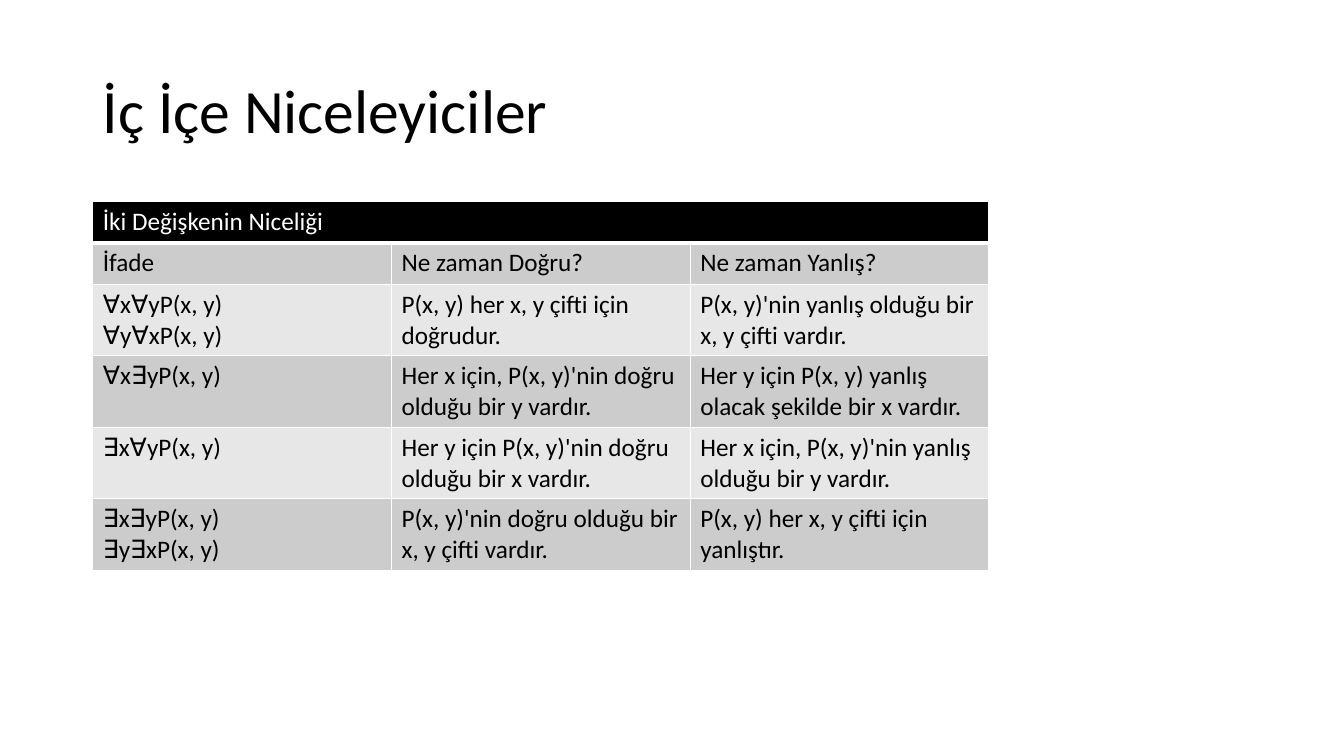
from lxml import etree
from pptx import Presentation
from pptx import util as u
from pptx.dml.color import RGBColor
from pptx.enum import text
from pptx.oxml import ns

COLORS = {"ink": "000000", "paper": "FFFFFF", "dark_band": "CCCCCC", "light_band": "E7E7E7"}
TITLE_FORMAT = {"name": "Calibri", "size": u.Pt(44), "bold": False}
CELL_FORMAT = {"name": "Calibri", "size": u.Pt(18), "bold": False}
LINE_HEIGHT = 0.3
CELL_PADDING = 0.11

TABLE_TITLE = "İki Değişkenin Niceliği"
QUANTIFIER_ROWS = [
    ("İfade", "Ne zaman Doğru?", "Ne zaman Yanlış?"),
    ("∀x∀yP(x, y)\n∀y∀xP(x, y)", "P(x, y) her x, y çifti için doğrudur.",
     "P(x, y)'nin yanlış olduğu bir x, y çifti vardır."),
    ("∀x∃yP(x, y)", "Her x için, P(x, y)'nin doğru olduğu bir y vardır.",
     "Her y için P(x, y) yanlış olacak şekilde bir x vardır."),
    ("∃x∀yP(x, y)", "Her y için P(x, y)'nin doğru olduğu bir x vardır.",
     "Her x için, P(x, y)'nin yanlış olduğu bir y vardır."),
    ("∃x∃yP(x, y)\n∃y∃xP(x, y)", "P(x, y)'nin doğru olduğu bir x, y çifti vardır.",
     "P(x, y) her x, y çifti için yanlıştır."),
]


def rgb(name):
    return RGBColor.from_string(COLORS[name])


def write(frame, content, color, font_format):
    frame.text = content
    for paragraph in frame.paragraphs:
        for run in paragraph.runs:
            for attribute, value in font_format.items():
                setattr(run.font, attribute, value)
            run.font.color.rgb = rgb(color)


def set_borders(cell, widths):
    """Draw white cell borders; widths maps each side to points."""
    properties = cell._tc.get_or_add_tcPr()
    for position, side in enumerate("LRTB"):
        line = etree.Element(ns.qn(f"a:ln{side}"), w=str(u.Pt(widths[side])))
        fill = etree.SubElement(line, ns.qn("a:solidFill"))
        etree.SubElement(fill, ns.qn("a:srgbClr"), val=COLORS["paper"])
        properties.insert(position, line)


def style_cell(cell, content, fill, color, bottom_width=1):
    write(cell.text_frame, content, color, CELL_FORMAT)
    cell.fill.solid()
    cell.fill.fore_color.rgb = rgb(fill)
    set_borders(cell, {"L": 1, "R": 1, "T": 1, "B": bottom_width})


def add_title(slide, content, left, top, width, height):
    box = slide.shapes.add_textbox(*map(u.Inches, (left, top, width, height)))
    frame = box.text_frame
    frame.word_wrap = True
    frame.vertical_anchor = text.MSO_ANCHOR.MIDDLE
    write(frame, content, "ink", TITLE_FORMAT)
    frame.paragraphs[0].line_spacing = 0.9


def add_quantifier_table(slide, left, top, width):
    line_counts = [1, 1] + [2] * (len(QUANTIFIER_ROWS) - 1)
    heights = [CELL_PADDING + LINE_HEIGHT * count for count in line_counts]
    column_count = len(QUANTIFIER_ROWS[0])
    table = slide.shapes.add_table(
        len(heights), column_count,
        *map(u.Inches, (left, top, width, sum(heights)))).table
    for row, height in zip(table.rows, heights):
        row.height = u.Inches(height)

    for cell in table.rows[0].cells:
        style_cell(cell, "", "ink", "paper", bottom_width=3)
    header = table.cell(0, 0)
    header.merge(table.cell(0, column_count - 1))
    write(header.text_frame, TABLE_TITLE, "paper", CELL_FORMAT)

    for row_index, contents in enumerate(QUANTIFIER_ROWS, start=1):
        band = "dark_band" if row_index % 2 else "light_band"
        for column_index, content in enumerate(contents):
            style_cell(table.cell(row_index, column_index), content, band, "ink")


def main():
    presentation = Presentation()
    presentation.slide_width = u.Inches(13.33)
    presentation.slide_height = u.Inches(7.5)
    slide = presentation.slides.add_slide(presentation.slide_layouts[6])
    add_title(slide, "İç İçe Niceleyiciler", 0.92, 0.4, 11.5, 1.45)
    add_quantifier_table(slide, 0.92, 2, 8.89)
    presentation.save("out.pptx")


if __name__ == "__main__":
    main()
